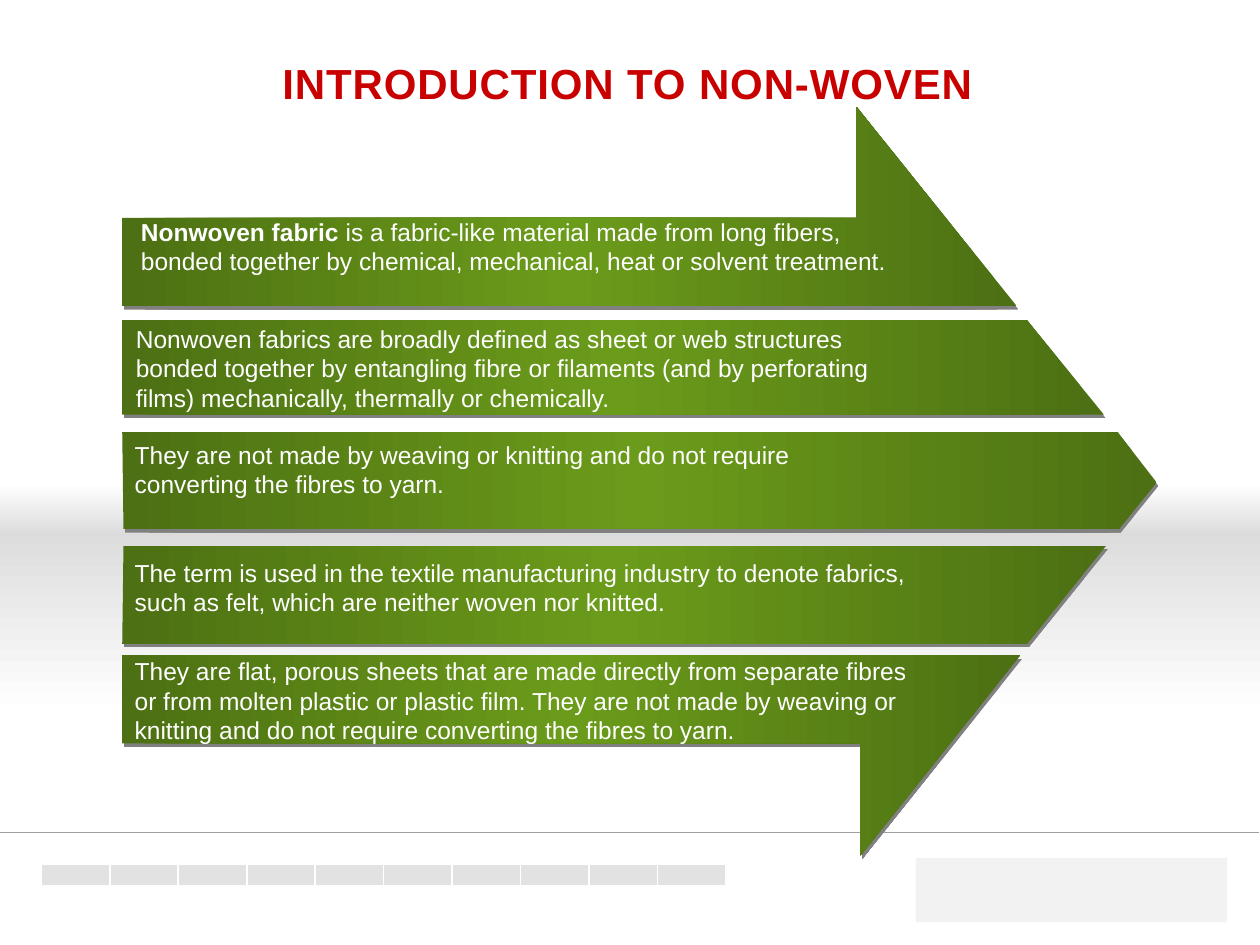
import copy
from dataclasses import dataclass

import pptx
import pptx.dml.color
import pptx.enum.shapes
import pptx.enum.text
import pptx.oxml.ns
import pptx.util
from lxml import etree

RGBColor = pptx.dml.color.RGBColor
Inches = pptx.util.Inches
Pt = pptx.util.Pt
qn = pptx.oxml.ns.qn
RECT = pptx.enum.shapes.MSO_SHAPE.RECTANGLE

WHITE = RGBColor(0xFF, 0xFF, 0xFF)
RED = RGBColor(0xC9, 0x00, 0x00)
DARK_GREEN = RGBColor(0x4C, 0x70, 0x13)
GREEN = RGBColor(0x6B, 0x9B, 0x1A)
BAND_GREY = RGBColor(0xDD, 0xDD, 0xDD)
UPPER_GREY = RGBColor(0xDB, 0xDB, 0xDB)
TILE_GREY = RGBColor(0xE2, 0xE2, 0xE2)
RULE_GREY = RGBColor(0x9F, 0x9F, 0x9F)
PANEL_GREY = RGBColor(0xF2, 0xF2, 0xF2)

TITLE_FONT = {"name": "Arial", "size": Pt(24), "bold": True}
BODY_FONT = {"name": "Arial", "size": Pt(14), "bold": False}


@dataclass
class Box:
    left: float
    top: float
    width: float
    height: float

    def lengths(self) -> list:
        return [Inches(v) for v in (self.left, self.top, self.width, self.height)]


@dataclass
class Strip:
    """One slice of the large arrow with its statement."""
    points: list
    box: Box
    text: str
    lead: str = ""


STRIPS = [
    Strip([(8.07, 2.43), (6.8, 0.85), (6.8, 1.73), (0.97, 1.73), (0.97, 2.43)],
          Box(1.02, 1.67, 6.36, 0.8),
          " is a fabric-like material made from long fibers, bonded together by "
          "chemical, mechanical, heat or solvent treatment.",
          lead="Nonwoven fabric"),
    Strip([(0.97, 3.29), (8.76, 3.29), (8.15, 2.54), (0.97, 2.54)],
          Box(0.98, 2.52, 6.1, 0.8),
          "Nonwoven fabrics are broadly defined as sheet or web structures bonded "
          "together by entangling fibre or filaments (and by perforating films) "
          "mechanically, thermally or chemically."),
    Strip([(0.98, 4.2), (8.88, 4.2), (9.18, 3.83), (8.87, 3.43), (0.97, 3.43)],
          Box(0.97, 3.44, 6.12, 0.57),
          "They are not made by weaving or knitting and do not require converting "
          "the fibres to yarn."),
    Strip([(0.97, 5.11), (8.15, 5.11), (8.78, 4.33), (0.98, 4.33)],
          Box(0.97, 4.38, 6.33, 0.57),
          "The term is used in the textile manufacturing industry to denote fabrics, "
          "such as felt, which are neither woven nor knitted."),
    Strip([(0.97, 5.9), (6.83, 5.9), (6.83, 6.79), (8.1, 5.2), (0.97, 5.2)],
          Box(0.97, 5.16, 6.41, 0.8),
          "They are flat, porous sheets that are made directly from separate fibres "
          "or from molten plastic or plastic film. They are not made by weaving or "
          "knitting and do not require converting the fibres to yarn."),
]


def set_font(font, color: RGBColor, formats: dict) -> None:
    for key, value in formats.items():
        setattr(font, key, value)
    font.color.rgb = color


def set_gradient(sp, colors: list, angle: float) -> None:
    """Spread the colours evenly; the angle runs counter-clockwise."""
    sp.fill.gradient()
    sp.fill.gradient_angle = angle
    stops = sp._element.spPr.find(".//" + qn("a:gsLst"))
    for _ in colors[2:]:
        stops.append(copy.deepcopy(stops[-1]))
    for i, (stop, color) in enumerate(zip(sp.fill.gradient_stops, colors)):
        stop.color.rgb = color
        stop.position = i / (len(colors) - 1)


def add_rect(s, box: Box):
    sp = s.shapes.add_shape(RECT, *box.lengths())
    sp.shadow.inherit = False
    sp.line.fill.background()
    return sp


def add_solid(s, box: Box, color: RGBColor):
    sp = add_rect(s, box)
    sp.fill.solid()
    sp.fill.fore_color.rgb = color
    return sp


def add_shadow(sp) -> None:
    sp.shadow.inherit = False
    effects = sp._element.spPr.find(qn("a:effectLst"))
    shadow = etree.SubElement(effects, qn("a:outerShdw"), dist=str(Pt(2.2)),
                              dir=str(63 * 60000), algn="ctr", rotWithShape="0")
    etree.SubElement(shadow, qn("a:srgbClr"), val="808080")


def add_strip_shape(s, strip: Strip) -> None:
    start, *rest = [(Inches(x), Inches(y)) for x, y in strip.points]
    builder = s.shapes.build_freeform(*start)
    builder.add_line_segments(rest, close=True)
    sp = builder.convert_to_shape()
    set_gradient(sp, [DARK_GREEN, GREEN, DARK_GREEN], 0)
    sp.line.fill.background()
    add_shadow(sp)


def add_strip_text(s, strip: Strip) -> None:
    tf = s.shapes.add_textbox(*strip.box.lengths()).text_frame
    tf.word_wrap = True
    p = tf.paragraphs[0]
    for text, bold in ((strip.lead, True), (strip.text, False)):
        if text:
            r = p.add_run()
            r.text = text
            set_font(r.font, WHITE, {**BODY_FONT, "bold": bold})


def add_title(s) -> None:
    sp = s.shapes.title
    sp.left, sp.top, sp.width, sp.height = Box(1.89, 0.45, 6.18, 0.46).lengths()
    tf = sp.text_frame
    tf.word_wrap = True
    tf.auto_size = pptx.enum.text.MSO_AUTO_SIZE.NONE
    tf.vertical_anchor = pptx.enum.text.MSO_ANCHOR.MIDDLE
    p = tf.paragraphs[0]
    p.alignment = pptx.enum.text.PP_ALIGN.CENTER
    p.line_spacing = 0.9
    r = p.add_run()
    r.text = "INTRODUCTION TO NON-WOVEN"
    set_font(r.font, RED, TITLE_FONT)
    r.font._element.set("spc", "50")


def add_backdrop(s) -> None:
    # Row of footer tiles
    pitch = 4.89 / 9
    for i in range(10):
        sp = add_solid(s, Box(0.33 + i * pitch, 6.86, 0.54, 0.17), TILE_GREY)
        sp.line.color.rgb = WHITE
        sp.line.width = Pt(0.75)

    # Footer rule
    rule = s.shapes.add_connector(pptx.enum.shapes.MSO_CONNECTOR.STRAIGHT,
                                  0, Inches(6.61), Inches(9.99), Inches(6.61))
    rule.line.color.rgb = RULE_GREY
    rule.line.width = Pt(0.75)
    etree.SubElement(rule._element.spPr, qn("a:effectLst"))

    # Grey horizon fading down and up
    set_gradient(add_rect(s, Box(0, 4.24, 10, 1.42)), [BAND_GREY, WHITE], 270)
    set_gradient(add_rect(s, Box(0, 3.83, 10, 0.43)), [UPPER_GREY, WHITE], 90)


def main() -> None:
    prs = pptx.Presentation()
    prs.slide_width, prs.slide_height = Inches(10), Inches(7.5)
    s = prs.slides.add_slide(prs.slide_layouts[5])
    add_backdrop(s)
    add_title(s)

    # Sliced arrow, then its statements on top
    for strip in STRIPS:
        add_strip_shape(s, strip)
    for strip in STRIPS:
        add_strip_text(s, strip)

    # Footer panel
    add_solid(s, Box(7.27, 6.81, 2.47, 0.51), PANEL_GREY)
    prs.save("out.pptx")


if __name__ == "__main__":
    main()
